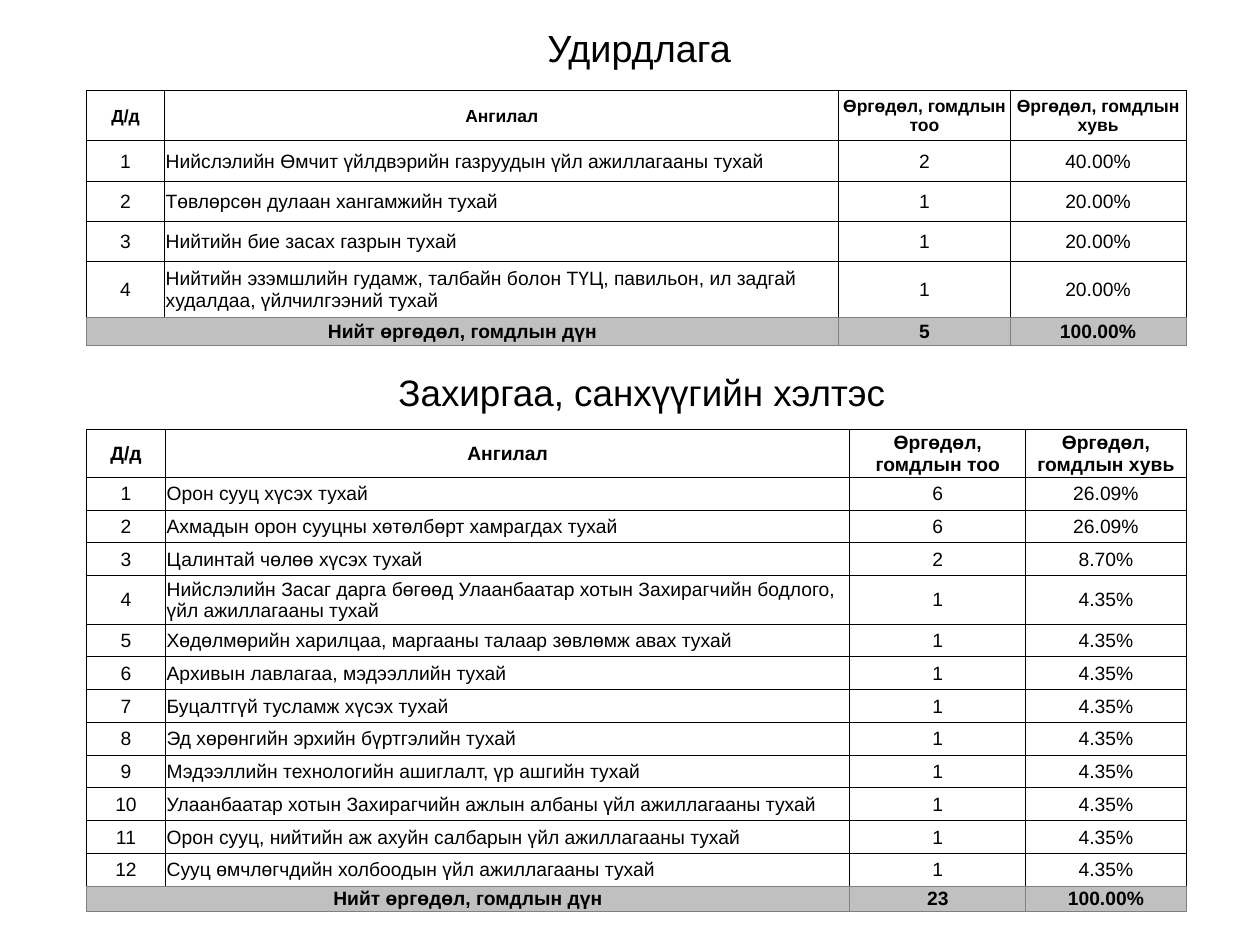
import pptx
import pptx.dml.color
import pptx.enum.text
import pptx.oxml
import pptx.oxml.ns
import pptx.util

Cm = pptx.util.Cm
Pt = pptx.util.Pt
ALIGN = pptx.enum.text.PP_ALIGN
MIDDLE = pptx.enum.text.MSO_ANCHOR.MIDDLE

BLACK = pptx.dml.color.RGBColor(0x00, 0x00, 0x00)
WHITE = pptx.dml.color.RGBColor(0xFF, 0xFF, 0xFF)
SILVER = pptx.dml.color.RGBColor(0xC0, 0xC0, 0xC0)
GREY = pptx.dml.color.RGBColor(0x80, 0x80, 0x80)

TABLE_LEFT = 1.74
HEADER = ["Д/д", "Ангилал", "Өргөдөл, гомдлын тоо", "Өргөдөл, гомдлын хувь"]
TOTAL_LABEL = "Нийт өргөдөл, гомдлын дүн"

MANAGEMENT = [
    ("Нийслэлийн Өмчит үйлдвэрийн газруудын үйл ажиллагааны тухай", 2),
    ("Төвлөрсөн дулаан хангамжийн тухай", 1),
    ("Нийтийн бие засах газрын тухай", 1),
    ("Нийтийн эзэмшлийн гудамж, талбайн болон ТҮЦ, павильон, ил задгай "
     "худалдаа, үйлчилгээний тухай", 1),
]
ADMINISTRATION = [
    ("Орон сууц хүсэх тухай", 6),
    ("Ахмадын орон сууцны хөтөлбөрт хамрагдах тухай", 6),
    ("Цалинтай чөлөө хүсэх тухай", 2),
    ("Нийслэлийн Засаг дарга бөгөөд Улаанбаатар хотын Захирагчийн бодлого, "
     "үйл ажиллагааны тухай", 1),
    ("Хөдөлмөрийн харилцаа, маргааны талаар зөвлөмж авах тухай", 1),
    ("Архивын лавлагаа, мэдээллийн тухай", 1),
    ("Буцалтгүй тусламж хүсэх тухай", 1),
    ("Эд хөрөнгийн эрхийн бүртгэлийн тухай", 1),
    ("Мэдээллийн технологийн ашиглалт, үр ашгийн тухай", 1),
    ("Улаанбаатар хотын Захирагчийн ажлын албаны үйл ажиллагааны тухай", 1),
    ("Орон сууц, нийтийн аж ахуйн салбарын үйл ажиллагааны тухай", 1),
    ("Сууц өмчлөгчдийн холбоодын үйл ажиллагааны тухай", 1),
]


class ReportSlide:
    """Holds the text style and the current slide."""

    font_format = {"name": "Arial", "bold": False}
    cell_format = {
        "margin_left": Cm(0.02), "margin_right": Cm(0.02),
        "margin_top": Cm(0.02), "margin_bottom": 0,
        "vertical_anchor": MIDDLE,
    }

    def __init__(self, slide):
        self.slide = slide

    def apply(self, target, values):
        for name, value in values.items():
            setattr(target, name, value)

    def add_text(self, text_frame, text, size, alignment=ALIGN.CENTER, **font):
        paragraph = text_frame.paragraphs[0]
        paragraph.alignment = alignment
        run = paragraph.add_run()
        run.text = text
        self.apply(run.font, {**self.font_format, "size": Pt(size), **font})
        run.font.color.rgb = BLACK
        return paragraph

    def heading(self, text, left, top, width, height, size, line_spacing=1.0):
        shape = self.slide.shapes.add_textbox(
            Cm(left), Cm(top), Cm(width), Cm(height))
        self.apply(shape.text_frame,
                   {"word_wrap": True, "vertical_anchor": MIDDLE})
        paragraph = self.add_text(shape.text_frame, text, size)
        paragraph.line_spacing = line_spacing

    def border(self, cell, side, color):
        line = pptx.oxml.parse_xml(
            f'<a:ln{side} {pptx.oxml.ns.nsdecls("a")} w="{Pt(0.5)}">'
            f'<a:solidFill><a:srgbClr val="{color}"/></a:solidFill>'
            f'</a:ln{side}>')
        cell._tc.get_or_add_tcPr().append(line)

    def table(self, items, top, columns, heights, header_size):
        total = sum(count for _, count in items)
        rows = [HEADER]
        for number, (text, count) in enumerate(items, 1):
            rows.append([str(number), text, str(count), f"{count / total:.2%}"])
        rows.append([TOTAL_LABEL, "", str(total), "100.00%"])
        last = len(rows) - 1

        frame = self.slide.shapes.add_table(
            len(rows), len(columns), Cm(TABLE_LEFT), Cm(top),
            Cm(sum(columns)), Cm(sum(heights)))
        table = frame.table
        self.apply(table, {"first_row": False, "horz_banding": False})
        for column, width in zip(table.columns, columns):
            column.width = Cm(width)
        for row, height in zip(table.rows, heights):
            row.height = Cm(height)
        table.cell(last, 0).merge(table.cell(last, 1))

        for i, values in enumerate(rows):
            for j, text in enumerate(values):
                cell = table.cell(i, j)
                self.apply(cell, self.cell_format)
                # The total row and the line above it are grey
                for side in "LRTB":
                    grey = i == last or (i == last - 1 and side == "B")
                    self.border(cell, side, GREY if grey else BLACK)
                cell.fill.solid()
                cell.fill.fore_color.rgb = SILVER if i == last else WHITE
                if text:
                    is_item = 0 < i < last
                    self.add_text(
                        cell.text_frame, text,
                        header_size if i == 0 else 11,
                        ALIGN.LEFT if is_item and j == 1 else ALIGN.CENTER,
                        bold=not is_item)


def main():
    presentation = pptx.Presentation()
    presentation.slide_width = Cm(25.4)
    presentation.slide_height = Cm(19.05)
    report = ReportSlide(
        presentation.slides.add_slide(presentation.slide_layouts[6]))

    # Management
    report.heading("Удирдлага", 3.4, 0.46, 18.97, 1.09, 21.6, 0.9)
    report.table(MANAGEMENT, 1.82, [1.58, 13.59, 3.45, 3.55],
                 [1.02] + [0.81] * 3 + [1.12, 0.57], header_size=10)

    # Administration and finance department
    report.heading("Захиргаа, санхүүгийн хэлтэс", 2.74, 7.32, 20.4, 1.14, 21)
    report.table(ADMINISTRATION, 8.65, [1.6, 13.79, 3.55, 3.23],
                 [0.97] + [0.66] * 3 + [0.98] + [0.66] * 8 + [0.51],
                 header_size=11)

    presentation.save("out.pptx")


if __name__ == "__main__":
    main()
